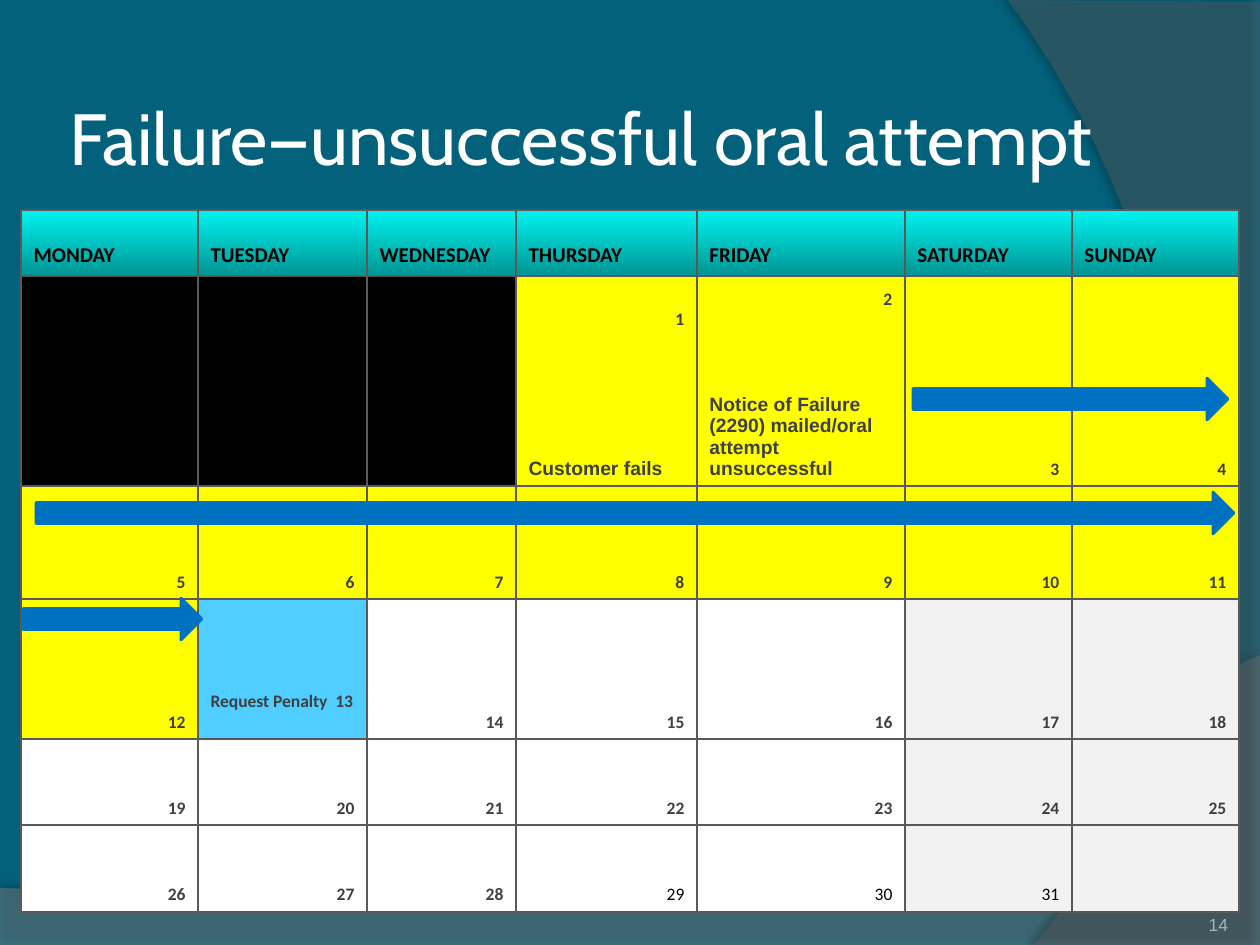
from lxml import etree
from pptx import Presentation
from pptx.dml.color import RGBColor
from pptx.enum.shapes import MSO_SHAPE
from pptx.enum.text import MSO_ANCHOR, PP_ALIGN
from pptx.oxml.ns import qn
from pptx.util import Pt

PX = 914400 / 126
LEFT, RIGHT = PP_ALIGN.LEFT, PP_ALIGN.RIGHT
BOTTOM, MIDDLE = MSO_ANCHOR.BOTTOM, MSO_ANCHOR.MIDDLE
RIGHT_ARROW = MSO_SHAPE.RIGHT_ARROW

COLORS = {
    "background": "04617B", "wave": "7F7F7F", "side": "5E5E5E", "shadow": "000000",
    "title": "FFFFFF", "number": "A2B5B8", "text": "404040", "black": "000000",
    "header_top": "00F3F0", "header_bottom": "009593", "border": "595959",
    "blank": "000000", "waiting": "FFFF00", "penalty": "4FCEFF",
    "weekday": "FFFFFF", "weekend": "F2F2F2", "arrow": "0070C0",
}
DAYS = ["MONDAY", "TUESDAY", "WEDNESDAY", "THURSDAY", "FRIDAY", "SATURDAY", "SUNDAY"]
COLUMN_WIDTHS = [177, 169, 149, 181, 208, 167, 167]
ROW_HEIGHTS = [66, 207, 113, 140, 86, 87]
FIRST_WEEKDAY = 3
LAST_DAY = 31
LAST_WAITING_DAY, PENALTY_DAY = 12, 13
FIRST_PLAIN_DAY = 29
# day: (event, points between the day number and the event)
EVENTS = {
    1: ("Customer fails", 73),
    2: ("Notice of Failure (2290) mailed/oral attempt unsuccessful", 48),
}


def emu(pixels):
    return round(pixels * PX)


def rgb(name):
    return RGBColor.from_string(COLORS[name])


def format_paragraph(paragraph, font_name, size, color, bold=False, align=LEFT):
    paragraph.alignment = align
    for run in paragraph.runs:
        run.font.name = font_name
        run.font.size = Pt(size)
        run.font.bold = bold
        run.font.color.rgb = rgb(color)


def add_text(slide, box, text, font_name, size, color, anchor, align=LEFT, inset=0):
    frame = slide.shapes.add_textbox(*map(emu, box)).text_frame
    frame.word_wrap = True
    frame.vertical_anchor = anchor
    frame.margin_left = frame.margin_right = emu(inset)
    frame.margin_top = frame.margin_bottom = emu(inset)
    frame.text = text
    format_paragraph(frame.paragraphs[0], font_name, size, color, align=align)


def curve(start, control_1, control_2, end, steps=40):
    """Points along a cubic Bezier curve, without its start."""
    points = []
    for step in range(1, steps + 1):
        t = step / steps
        weights = ((1 - t) ** 3, 3 * t * (1 - t) ** 2, 3 * t * t * (1 - t), t ** 3)
        corners = (start, control_1, control_2, end)
        points.append(tuple(sum(w * c[axis] for w, c in zip(weights, corners))
                            for axis in (0, 1)))
    return points


def add_backdrop(slide, points, color, opacity, shadow_opacity, distance, direction):
    """Add a translucent outline with a soft shadow."""
    outline = [(emu(x), emu(y)) for x, y in points]
    builder = slide.shapes.build_freeform(*outline[0], scale=1.0)
    builder.add_line_segments(outline[1:], close=True)
    shape = builder.convert_to_shape()
    shape.fill.solid()
    shape.fill.fore_color.rgb = rgb(color)
    shape.line.fill.background()
    shape.shadow.inherit = False
    properties = shape._element.spPr
    fill_color = properties.find(qn("a:solidFill")).find(qn("a:srgbClr"))
    etree.SubElement(fill_color, qn("a:alpha"), val=str(opacity * 1000))
    shadow = etree.SubElement(
        properties.find(qn("a:effectLst")), qn("a:outerShdw"), blurRad=str(Pt(4)),
        dist=str(Pt(distance)), dir=str(direction * 60000), rotWithShape="0")
    shadow_color = etree.SubElement(shadow, qn("a:srgbClr"), val=COLORS["shadow"])
    etree.SubElement(shadow_color, qn("a:alpha"), val=str(shadow_opacity * 1000))


def add_background(slide, width, height):
    slide.background.fill.solid()
    slide.background.fill.fore_color.rgb = rgb("background")
    wave_start = (width, 655)
    wave = [(0, 888), (0, height), (width, height), wave_start]
    wave += curve(wave_start, (704, 919), (493, 906), (0, 888))
    add_backdrop(slide, wave, "wave", 45, 35, 3.5, 270)
    side_start = (1034, height)
    side = [(width, 2), (width, height), side_start]
    side += curve(side_start, (1178, 780), (1283, 378), (1008, 0))
    add_backdrop(slide, side, "side", 40, 45, 4, 180)


def style_cell(cell, color):
    """Draw the borders, which must come before the fill in the XML."""
    properties = cell._tc.get_or_add_tcPr()
    for side in ("a:lnL", "a:lnR", "a:lnT", "a:lnB"):
        line = etree.SubElement(properties, qn(side), w=str(Pt(1)))
        fill = etree.SubElement(line, qn("a:solidFill"))
        etree.SubElement(fill, qn("a:srgbClr"), val=COLORS["border"])
    cell.vertical_anchor = BOTTOM
    if color == "header":
        cell.fill.gradient()
        cell.fill.gradient_angle = 270
        for stop, name in zip(cell.fill.gradient_stops, ("header_top", "header_bottom")):
            stop.color.rgb = rgb(name)
    else:
        cell.fill.solid()
        cell.fill.fore_color.rgb = rgb(color)


def day_color(day, column):
    if day < 1:
        return "blank"
    if day <= LAST_WAITING_DAY:
        return "waiting"
    if day == PENALTY_DAY:
        return "penalty"
    return "weekend" if column >= 5 else "weekday"


def fill_day(cell, day):
    frame = cell.text_frame
    paragraph = frame.paragraphs[0]
    if day == PENALTY_DAY:
        paragraph.text = f"Request Penalty  {day}"
        cell.margin_bottom = emu(27)
    else:
        paragraph.text = str(day)
    plain = day >= FIRST_PLAIN_DAY
    format_paragraph(paragraph, "Calibri", 10, "black" if plain else "text",
                     not plain, LEFT if day == PENALTY_DAY else RIGHT)
    if day in EVENTS:
        event, gap = EVENTS[day]
        paragraph = frame.add_paragraph()
        paragraph.text = event
        paragraph.space_before = Pt(gap)
        format_paragraph(paragraph, "Arial", 11, "text", True)


def add_calendar(slide, left, top):
    table = slide.shapes.add_table(
        len(ROW_HEIGHTS), len(DAYS), emu(left), emu(top),
        emu(sum(COLUMN_WIDTHS)), emu(sum(ROW_HEIGHTS))).table
    table.first_row = table.horz_banding = False
    for column, width in zip(table.columns, COLUMN_WIDTHS):
        column.width = emu(width)
    for row, height in zip(table.rows, ROW_HEIGHTS):
        row.height = emu(height)
    for column, name in enumerate(DAYS):
        header = table.cell(0, column)
        style_cell(header, "header")
        header.margin_bottom = emu(8)
        header.text_frame.text = name
        format_paragraph(header.text_frame.paragraphs[0], "Calibri", 12, "black", True)
        for week in range(1, len(ROW_HEIGHTS)):
            day = (week - 1) * len(DAYS) + column - FIRST_WEEKDAY + 1
            cell = table.cell(week, column)
            style_cell(cell, day_color(day, column))
            if 1 <= day <= LAST_DAY:
                fill_day(cell, day)


def add_waiting_arrow(slide, left, top, width):
    arrow = slide.shapes.add_shape(RIGHT_ARROW, *map(emu, (left, top, width, 42)))
    arrow.shadow.inherit = False
    arrow.fill.solid()
    arrow.fill.fore_color.rgb = rgb("arrow")
    arrow.line.color.rgb = rgb("arrow")
    arrow.line.width = Pt(1.5)


def main():
    presentation = Presentation()
    presentation.slide_width, presentation.slide_height = emu(1260), emu(945)
    slide = presentation.slides.add_slide(presentation.slide_layouts[6])
    add_background(slide, 1260, 945)
    add_text(slide, (63, 84, 1155, 105), "Failure—unsuccessful oral attempt",
             "Cabin", 41.4, "title", MIDDLE, inset=6)
    add_text(slide, (1124, 885, 104, 50), "14", "Arial", 10, "number", BOTTOM, RIGHT)
    add_calendar(slide, 21, 210)
    for left, top, width in ((913, 378, 315), (36, 492, 1198), (23, 598, 179)):
        add_waiting_arrow(slide, left, top, width)
    presentation.save("out.pptx")


if __name__ == "__main__":
    main()
